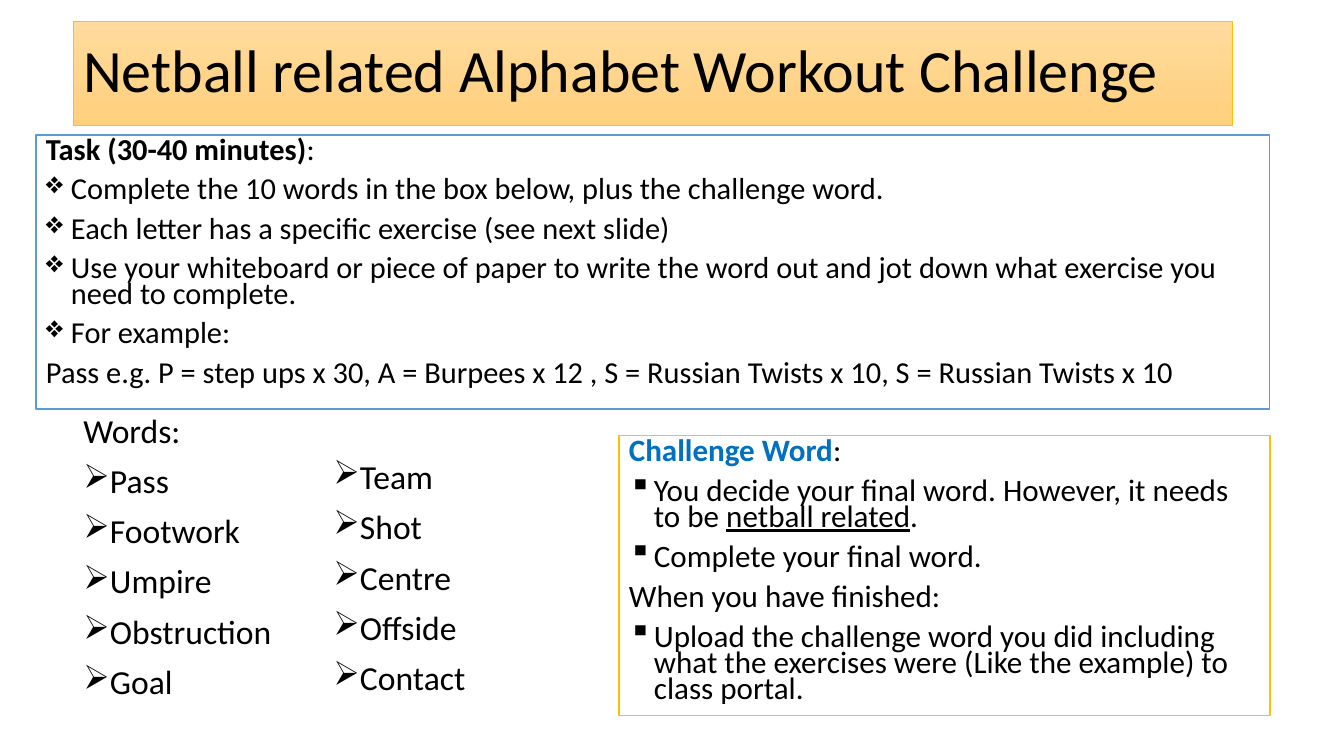
from lxml import etree
from pptx import Presentation
from pptx.dml.color import RGBColor
from pptx.enum.shapes import MSO_SHAPE
from pptx.enum.text import MSO_ANCHOR as ANCHOR, PP_ALIGN as ALIGN
from pptx.oxml.ns import qn
from pptx.util import Cm, Pt

BLACK = RGBColor(0x00, 0x00, 0x00)
WHITE = RGBColor(0xFF, 0xFF, 0xFF)
BLUE = RGBColor(0x5B, 0x9B, 0xD5)
HEADING_BLUE = RGBColor(0x00, 0x70, 0xC0)
GOLD = RGBColor(0xFF, 0xC0, 0x00)
TITLE_TOP = RGBColor(0xFF, 0xDB, 0x9E)
TITLE_BOTTOM = RGBColor(0xFF, 0xD0, 0x7C)

TASK = [
    (None, [("Task (30-40 minutes)", {"bold": True}), (":", {})]),
    ("❖", "Complete the 10 words in the box below, plus the challenge word."),
    ("❖", "Each letter has a specific exercise (see next slide)"),
    ("❖", "Use your whiteboard or piece of paper to write the word out "
          "and jot down what exercise you need to complete."),
    ("❖", "For example:"),
    (None, "Pass e.g. P = step ups x 30, A = Burpees x 12 , "
           "S = Russian Twists x 10, S = Russian Twists x 10"),
]
CHALLENGE = [
    (None, [("Challenge Word", {"bold": True, "color": HEADING_BLUE}), (":", {})]),
    ("▪", [("You decide your final word. However, it needs to be ", {}),
           ("netball related", {"underline": True}), (".", {})]),
    ("▪", "Complete your final word."),
    (None, "When you have finished:"),
    ("▪", "Upload the challenge word you did including what the exercises "
          "were (Like the example) to class portal."),
]
LEFT_WORDS = ["Pass", "Footwork", "Umpire", "Obstruction", "Goal"]
RIGHT_WORDS = ["Team", "Shot", "Centre", "Offside", "Contact"]


class SlideBuilder:
    """Holds the text style and the current slide."""

    font = "Calibri"
    indent = Cm(0.63)
    space_before = Pt(10)

    def __init__(self, slide):
        self.s = slide

    def box(self, at, line, width):
        sp = self.s.shapes.add_shape(MSO_SHAPE.RECTANGLE, *map(Cm, at))
        sp.shadow.inherit = False
        sp.fill.solid()
        sp.fill.fore_color.rgb = WHITE
        sp.line.color.rgb = line
        sp.line.width = Pt(width)
        return sp

    def text_box(self, at):
        return self.s.shapes.add_textbox(*map(Cm, at))

    def gradient(self, sp, colors):
        sp.fill.gradient()
        sp.fill.gradient_angle = 270
        for stop, color in zip(sp.fill.gradient_stops, colors):
            stop.color.rgb = color

    def bullet(self, p, char):
        pPr = p._p.get_or_add_pPr()
        pPr.set("marL", str(self.indent))
        pPr.set("indent", str(-self.indent))
        etree.SubElement(pPr, qn("a:buChar")).set("char", char)

    def run(self, p, text, size, bold=False, underline=False, color=BLACK):
        r = p.add_run()
        r.text = text
        r.font.name = self.font
        r.font.size = Pt(size)
        r.font.bold = bold
        r.font.underline = underline
        r.font.color.rgb = color

    def add_text(self, sp, paragraphs, size, spacing, anchor=ANCHOR.TOP):
        tf = sp.text_frame
        tf.word_wrap = True
        tf.vertical_anchor = anchor
        for i, (char, content) in enumerate(paragraphs):
            p = tf.add_paragraph() if i else tf.paragraphs[0]
            if char:
                self.bullet(p, char)
            p.alignment = ALIGN.LEFT
            p.line_spacing = spacing
            p.space_before = self.space_before if i else Pt(0)
            runs = [(content, {})] if isinstance(content, str) else content
            for text, style in runs:
                self.run(p, text, size, **style)


def main():
    prs = Presentation()
    prs.slide_width, prs.slide_height = Cm(33.87), Cm(19.05)
    b = SlideBuilder(prs.slides.add_slide(prs.slide_layouts[6]))

    task = b.box((0.91, 3.4, 31.09, 6.91), BLUE, 1)
    b.add_text(task, TASK, 21.7, 0.7)

    title = b.box((1.85, 0.53, 29.21, 2.64), GOLD, 0.5)
    b.gradient(title, (TITLE_TOP, TITLE_BOTTOM))
    b.add_text(title, [(None, "Netball related Alphabet Workout Challenge")],
               42.9, 0.9, ANCHOR.MIDDLE)

    left = b.text_box((1.85, 10.31, 5.94, 7.7))
    b.add_text(left, [(None, "Words:")] + [("➢", w) for w in LEFT_WORDS], 24, 0.9)
    right = b.text_box((8.15, 11.48, 5.33, 6.53))
    b.add_text(right, [("➢", w) for w in RIGHT_WORDS], 24, 0.9)

    challenge = b.box((15.6, 10.97, 16.41, 7.06), GOLD, 1)
    b.add_text(challenge, CHALLENGE, 22.2, 0.7)

    prs.save("out.pptx")


if __name__ == "__main__":
    main()
